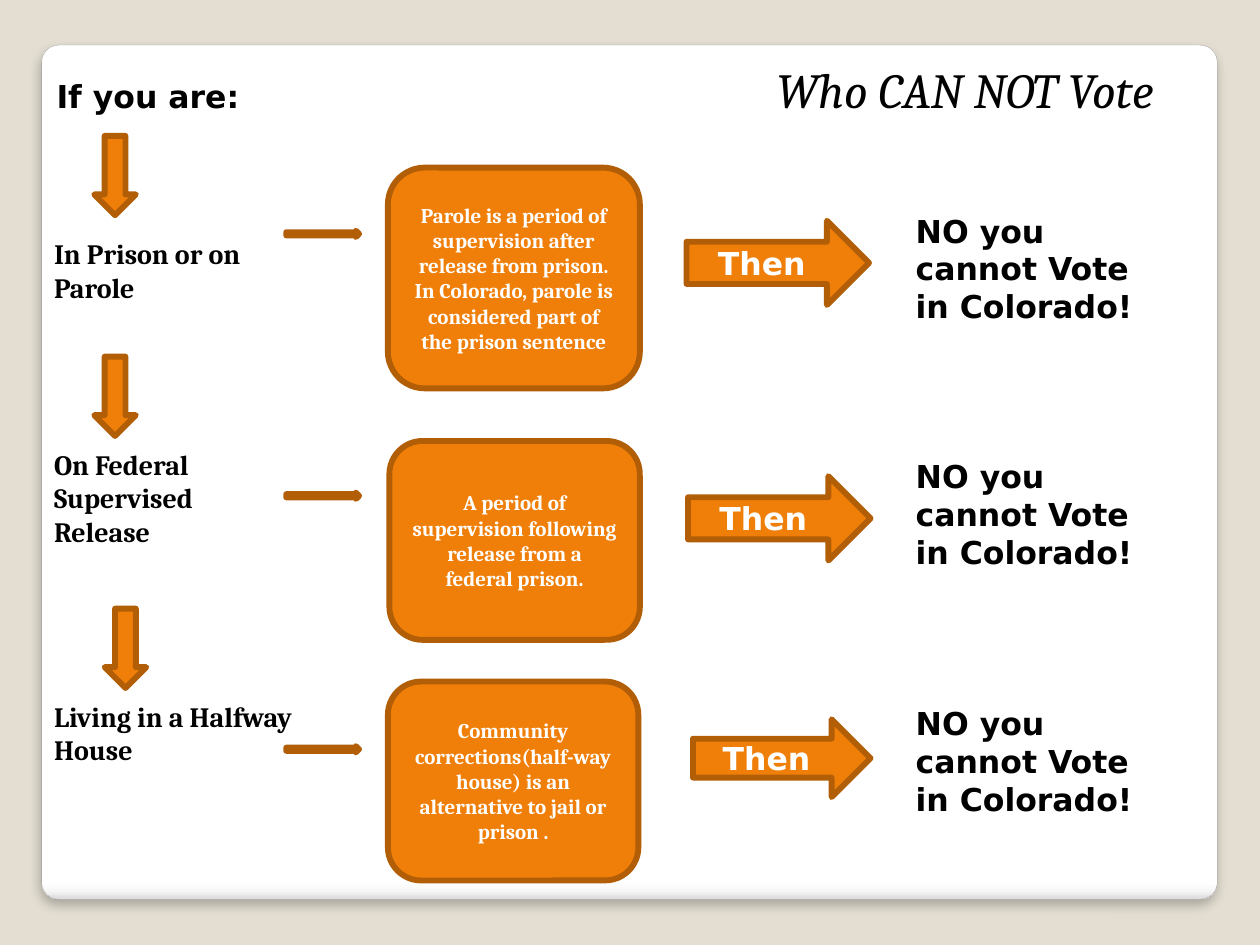
"""Build the slide on who cannot vote in Colorado."""
from lxml import etree
from pptx import Presentation
from pptx import util as u
from pptx.dml.color import RGBColor
from pptx.enum import shapes, text
from pptx.oxml import parse_xml
from pptx.oxml.ns import nsdecls

SERIF, SANS = "Cambria", "DejaVu Sans"
BLACK, WHITE, ORANGE, BROWN = "000000", "FFFFFF", "F07F09", "B25E07"
TITLE = "Who CAN NOT Vote "
START = "If you are:"
THEN = "Then "
RESULT = ["NO you", "cannot Vote in Colorado!"]
ROWS = [
    dict(status="In Prison or on Parole",
         meaning="Parole is a period of supervision after release from prison. "
                 "In Colorado, parole is considered part of the prison sentence",
         down=(1.9, 2.74), label=(4.65, 4.62, 1.63), dash=4.65,
         box=(7.82, 3.38, 5.08, 4.45), then=(13.84, 4.45, 3.68, 1.7), result=4.14),
    dict(status="On Federal Supervised Release",
         meaning="A period of supervision following release from a federal prison.",
         down=(1.9, 7.19), label=(8.89, 5.33, 2.31), dash=9.93,
         box=(7.85, 8.89, 5.05, 4.01), then=(13.87, 9.6, 3.68, 1.7), result=9.09),
    dict(status="Living in a Halfway House",
         meaning="Community corrections(half-way house) is an alternative to jail or prison .",
         down=(2.11, 12.27), label=(13.97, 5.54, 1.63), dash=15.04,
         box=(7.82, 13.74, 5.05, 4.01), then=(13.97, 14.5, 3.58, 1.57), result=14.07),
]
STOPS = [(0, "FFFFFF"), (98, "FFFFFF"), (99, "F7F7F7"), (100, "DADADA")]


def rgb(value):
    return RGBColor.from_string(value)


def cm(*values):
    return [u.Cm(v) for v in values]


def write(sp, lines, size, font, color, align=text.PP_ALIGN.LEFT, bold=True, italic=False):
    tf = sp.text_frame
    tf.word_wrap = True
    tf.text = "\n".join(lines)
    for p in tf.paragraphs:
        p.alignment = align
        p.font.size, p.font.name = u.Pt(size), font
        p.font.bold, p.font.italic = bold, italic
        p.font.color.rgb = rgb(color)


def add_text(s, at, lines, size, font):
    write(s.shapes.add_textbox(*cm(*at)), lines, size, font, BLACK)


def add_block(s, kind, at, line=None, size=12, font=SERIF):
    sp = s.shapes.add_shape(kind, *cm(*at))
    sp.shadow.inherit = False
    sp.fill.solid()
    sp.fill.fore_color.rgb = rgb(ORANGE)
    sp.line.color.rgb = rgb(BROWN)
    sp.line.width = u.Pt(3.35)
    if line:
        write(sp, [line], size, font, WHITE, text.PP_ALIGN.CENTER)
        sp.text_frame.vertical_anchor = text.MSO_ANCHOR.MIDDLE


def add_panel(s):
    sp = s.shapes.add_shape(shapes.MSO_SHAPE.ROUNDED_RECTANGLE, *cm(0.84, 0.91, 23.7, 17.22))
    sp.adjustments[0] = 0.02
    sp.line.color.rgb = rgb("A4A4A4")
    sp.line.width = u.Pt(0.16)
    sp.fill.gradient()
    sp.fill.gradient_angle = 270
    stops = sp.fill.gradient_stops
    gs_list = sp.element.spPr.find(".//{*}gsLst")
    for gs in list(gs_list):
        gs_list.remove(gs)
    for pos, color in STOPS:
        gs_list.append(parse_xml(
            f'<a:gs {nsdecls("a")} pos="{pos * 1000}"><a:srgbClr val="{color}"/></a:gs>'))
    sp.shadow.inherit = False
    effects = sp.element.spPr.find("{*}effectLst")
    effects.append(parse_xml(
        f'<a:outerShdw {nsdecls("a")} blurRad="{u.Pt(6)}" dist="{u.Pt(4)}" dir="5400000" '
        'rotWithShape="0"><a:srgbClr val="000000"><a:alpha val="25000"/></a:srgbClr>'
        '</a:outerShdw>'))
    s.shapes._spTree.insert(2, sp.element)


def add_row(s, row):
    kind = shapes.MSO_SHAPE
    y, w, h = row["label"]
    add_text(s, (0.84, y, w, h), [row["status"]], 16, SERIF)
    add_block(s, kind.DOWN_ARROW, (*row["down"], 0.84, 1.6))
    add_block(s, kind.RIGHT_ARROW, (5.77, row["dash"], 1.47, 0.13))
    add_block(s, kind.ROUNDED_RECTANGLE, row["box"], row["meaning"])
    add_block(s, kind.RIGHT_ARROW, row["then"], THEN, 18, SANS)
    add_text(s, (18.21, row["result"], 5.2, 2.57), RESULT, 18, SANS)


def main():
    prs = Presentation()
    prs.slide_width, prs.slide_height = cm(25.4, 19.05)
    s = prs.slides.add_slide(prs.slide_layouts[5])
    s.background.fill.solid()
    s.background.fill.fore_color.rgb = rgb("E3DED1")
    add_panel(s)
    title = s.shapes.title
    title.left, title.top, title.width, title.height = cm(1.24, 1.07, 22.48, 1.45)
    write(title, [TITLE], 28, SERIF, BLACK, text.PP_ALIGN.RIGHT, bold=False, italic=True)
    add_text(s, (0.89, 1.42, 5.26, 1.02), [START], 18, SANS)
    for row in ROWS:
        add_row(s, row)
    prs.save("out.pptx")


if __name__ == "__main__":
    main()
